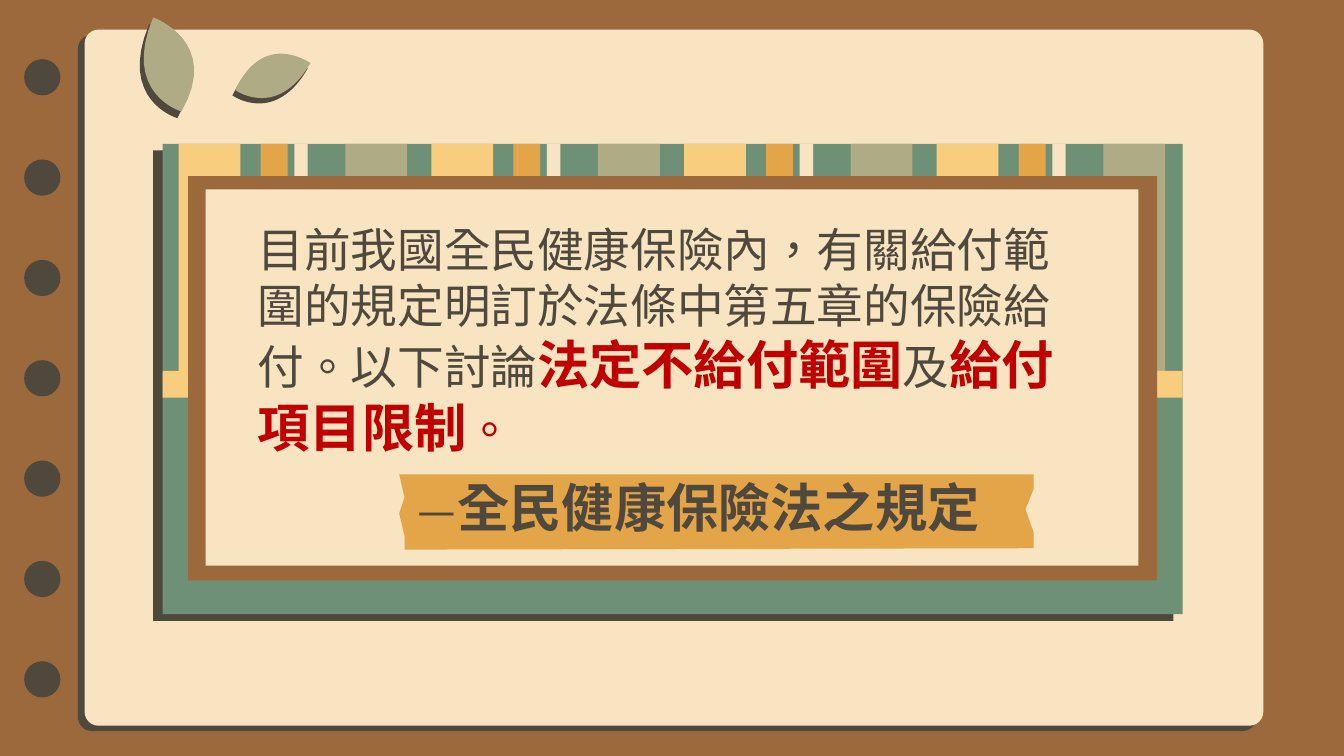
from lxml import etree
from pptx import Presentation
from pptx.dml.color import RGBColor
from pptx.enum.shapes import MSO_SHAPE as Preset
from pptx.enum.text import MSO_ANCHOR as Anchor, PP_ALIGN as Align
from pptx.oxml.ns import qn
from pptx.util import Inches, Pt

DARK, CREAM, BROWN = "4F493D", "F9E4C2", "9C693D"
GREEN, SAGE, YELLOW, ORANGE, RED = "6E9077", "AFAB85", "F8CD7D", "E4A448", "C00000"


def color(value):
    return RGBColor.from_string(value)


def curve(start, control_1, control_2, end, steps=16):
    """Return points along a cubic Bezier curve, without its start."""
    points = []
    for step in range(1, steps + 1):
        t = step / steps
        weights = ((1 - t) ** 3, 3 * t * (1 - t) ** 2, 3 * t ** 2 * (1 - t), t ** 3)
        corners = (start, control_1, control_2, end)
        points.append(tuple(sum(w * c[axis] for w, c in zip(weights, corners))
                            for axis in (0, 1)))
    return points


def leaf_outline(start, *curves):
    points = [start]
    for controls in curves:
        points += curve(points[-1], *controls)
    return points


class SlideBuilder:
    font_name = "Calibri"
    language = "zh-TW"

    def __init__(self, slide, background):
        self.slide = slide
        fill = slide.background.fill
        fill.solid()
        fill.fore_color.rgb = color(background)

    def paint(self, shape, fill):
        shape.shadow.inherit = False
        shape.fill.solid()
        shape.fill.fore_color.rgb = color(fill)
        shape.line.fill.background()
        return shape

    def preset(self, kind, box, fill):
        shape = self.slide.shapes.add_shape(kind, *map(Inches, box))
        return self.paint(shape, fill)

    def rectangle(self, box, fill):
        return self.preset(Preset.RECTANGLE, box, fill)

    def outline(self, points, fill, shift=(0, 0)):
        moved = [(Inches(x + shift[0]), Inches(y + shift[1])) for x, y in points]
        builder = self.slide.shapes.build_freeform(*moved[0])
        builder.add_line_segments(moved[1:], close=True)
        return self.paint(builder.convert_to_shape(), fill)

    def text(self, box, runs, alignment):
        """Add one paragraph from (text, size, colour, bold) runs."""
        frame = self.slide.shapes.add_textbox(*map(Inches, box)).text_frame
        margins = ("margin_left", "margin_top", "margin_right", "margin_bottom")
        settings = dict.fromkeys(margins, Inches(0.1))
        settings.update(word_wrap=True, vertical_anchor=Anchor.MIDDLE)
        for name, value in settings.items():
            setattr(frame, name, value)
        paragraph = frame.paragraphs[0]
        paragraph.alignment = alignment
        for words, size, run_color, bold in runs:
            run = paragraph.add_run()
            run.text = words
            run.font.color.rgb = color(run_color)
            for name, value in {"name": self.font_name, "size": Pt(size), "bold": bold}.items():
                setattr(run.font, name, value)
            properties = run._r.get_or_add_rPr()
            properties.set("lang", self.language)
            etree.SubElement(properties, qn("a:ea")).set("typeface", self.font_name)


def add_notebook(builder):
    for box, fill in (((0.58, 0.26, 8.77, 5.18), DARK), ((0.63, 0.22, 8.77, 5.18), CREAM)):
        page = builder.preset(Preset.ROUNDED_RECTANGLE, box, fill)
        page.adjustments[0] = 0.02
    for index in range(7):
        builder.preset(Preset.OVAL, (0.18, 0.44 + index * 4.48 / 6, 0.27, 0.27), DARK)


def add_frame(builder):
    builder.rectangle((1.14, 1.12, 7.59, 3.5), DARK)
    builder.rectangle((1.21, 1.07, 7.59, 3.5), GREEN)
    stripes = ((1.33, 0.46, YELLOW), (1.94, 0.2, ORANGE), (2.19, 0.1, CREAM), (2.57, 0.46, SAGE))
    for group in range(4):
        for left, width, fill in stripes:
            builder.rectangle((left + 1.88 * group, 1.07, width, 1.86), fill)
    builder.rectangle((1.21, 2.76, 7.59, 0.2), YELLOW)
    builder.rectangle((1.4, 1.31, 7.21, 3.01), BROWN)
    builder.rectangle((1.53, 1.41, 6.94, 2.8), CREAM)


def add_wording(builder):
    ribbon = [(2.97, 3.53), (3.01, 3.7), (2.97, 3.82), (3.01, 3.99), (3.01, 4.09),
              (7.69, 4.08), (7.69, 3.96), (7.63, 3.79), (7.69, 3.64), (7.69, 3.53)]
    builder.outline(ribbon, ORANGE)
    builder.text((2.01, 3.65, 6.36, 0.24), [
        ("—", 25, DARK, False),
        ("全民健康保險法之規定", 28, DARK, True),
    ], Align.CENTER)
    builder.text((1.82, 1.86, 6.36, 1.33), [
        ("目前我國全民健康保險內，有關給付範圍的規定明訂於法條中第五章的保險給付。以下討論",
         25, DARK, False),
        ("法定不給付範圍", 28, RED, True),
        ("及", 25, DARK, False),
        ("給付項目限制", 28, RED, True),
        ("。", 25, RED, False),
    ], Align.LEFT)


def add_leaves(builder):
    right_leaf = leaf_outline(
        (2.09, 0.4),
        ((1.98, 0.4), (1.85, 0.46), (1.75, 0.67)),
        ((1.75, 0.67), (1.83, 0.73), (1.95, 0.73)),
        ((2.05, 0.73), (2.19, 0.68), (2.31, 0.47)),
        ((2.31, 0.47), (2.21, 0.4), (2.09, 0.4)))
    left_leaf = leaf_outline(
        (1.14, 0.13),
        ((0.9, 0.7), (1.35, 0.83), (1.35, 0.83)),
        ((1.65, 0.31), (1.14, 0.13), (1.14, 0.13)))
    for leaf, shift in ((right_leaf, (-0.02, 0.04)), (left_leaf, (-0.03, 0.05))):
        builder.outline(leaf, DARK, shift)
        builder.outline(leaf, SAGE)


def main():
    presentation = Presentation()
    presentation.slide_width = Inches(10)
    presentation.slide_height = presentation.slide_width * 9 // 16
    slide = presentation.slides.add_slide(presentation.slide_layouts[6])
    builder = SlideBuilder(slide, BROWN)
    add_notebook(builder)
    add_frame(builder)
    add_wording(builder)
    add_leaves(builder)
    presentation.save("out.pptx")


if __name__ == "__main__":
    main()
